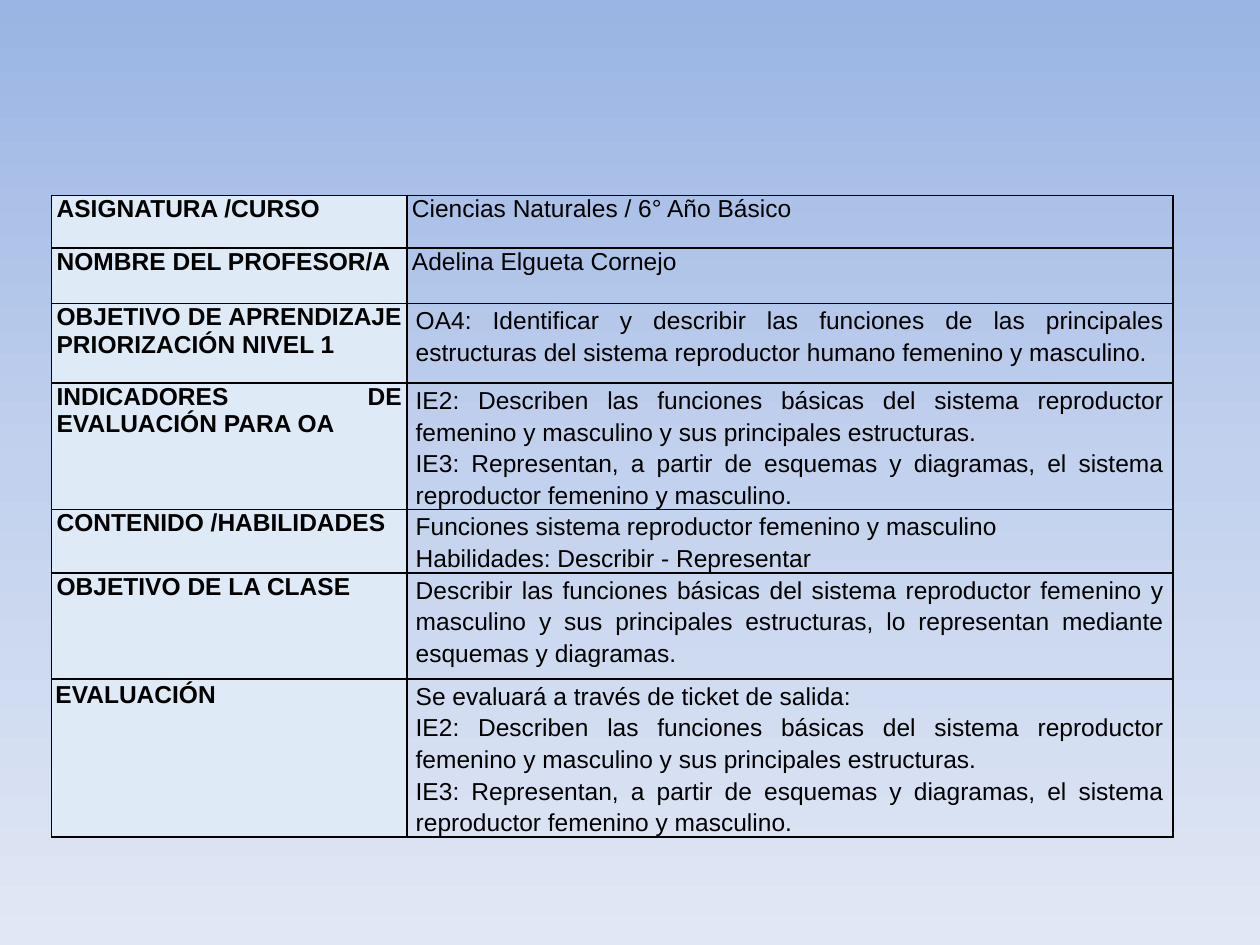
from copy import deepcopy
from dataclasses import dataclass

from lxml.etree import fromstring
from pptx import Presentation
from pptx.dml.color import RGBColor
from pptx.enum.text import PP_ALIGN
from pptx.oxml.ns import nsdecls, qn
from pptx.util import Inches, Pt

COLORS = {
    "ink": "000000", "label": "DEEAF6",
    "top": "9AB5E4", "mid": "C2D1ED", "low": "E1E8F5",
}
LEFT, TOP, HIGH = 0.41, 1.55, 5.29
COLS = (2.82, 6.08)

GOALS = (
    "IE2: Describen las funciones básicas del sistema reproductor femenino "
    "y masculino y sus principales estructuras.",
    "IE3: Representan, a partir de esquemas y diagramas, el sistema "
    "reproductor femenino y masculino.",
)


@dataclass
class Row:
    label: str
    lines: tuple[str, ...]
    high: float
    loose: bool = True
    pad: tuple[float, float] = (0.04, 0)


ROWS = [
    Row("ASIGNATURA /CURSO", ("Ciencias Naturales / 6° Año Básico",), 0.42, loose=False),
    Row("NOMBRE DEL PROFESOR/A", ("Adelina Elgueta Cornejo",), 0.44, loose=False),
    Row("OBJETIVO DE APRENDIZAJE PRIORIZACIÓN NIVEL 1",
        ("OA4: Identificar y describir las funciones de las principales "
         "estructuras del sistema reproductor humano femenino y masculino.",), 0.63),
    Row("INDICADORES DE EVALUACIÓN PARA OA", GOALS, 0.55),
    Row("CONTENIDO /HABILIDADES",
        ("Funciones sistema reproductor femenino y masculino",
         "Habilidades: Describir - Representar"), 0.34),
    Row("OBJETIVO DE LA CLASE",
        ("Describir las funciones básicas del sistema reproductor femenino y "
         "masculino y sus principales estructuras, lo representan mediante "
         "esquemas y diagramas.",), 0.84),
    Row("EVALUACIÓN", ("Se evaluará a través de ticket de salida:", *GOALS),
        0.84, pad=(0.03, 0.02)),
]


def color(name: str) -> RGBColor:
    return RGBColor.from_string(COLORS[name])


def write(frame, lines: tuple[str, ...], *, bold=False, size=14, font="Arial",
          ink="ink", gap=None, align=PP_ALIGN.JUSTIFY) -> None:
    for i, line in enumerate(lines):
        para = frame.add_paragraph() if i else frame.paragraphs[0]
        para.alignment = align
        para.line_spacing = gap
        run = para.add_run()
        run.text = line
        run.font.name, run.font.size, run.font.bold = font, Pt(size), bold
        run.font.color.rgb = color(ink)


def border(cell, width: float = 1) -> None:
    props = cell._tc.get_or_add_tcPr()
    for i, side in enumerate("LRTB"):
        props.insert(i, fromstring(
            f'<a:ln{side} {nsdecls("a")} w="{Pt(width)}"><a:solidFill>'
            f'<a:srgbClr val="{COLORS["ink"]}"/></a:solidFill></a:ln{side}>'))


def inset(cell, across: float, down: float) -> None:
    cell.margin_left = cell.margin_right = Inches(across)
    cell.margin_top = cell.margin_bottom = Inches(down)


def shade(slide) -> None:
    fill = slide.background.fill
    fill.gradient()
    fill.gradient_angle = 270
    stops = slide.element.find(".//" + qn("a:gsLst"))
    stops.insert(1, deepcopy(stops[0]))
    for i, (stop, name) in enumerate(zip(fill.gradient_stops, ("top", "mid", "low"))):
        stop.position = i / 2
        stop.color.rgb = color(name)


def draw(slide, rows: list[Row]) -> None:
    frame = slide.shapes.add_table(
        len(rows), len(COLS), Inches(LEFT), Inches(TOP),
        Inches(sum(COLS)), Inches(HIGH))
    table = frame.table
    table.first_row = table.horz_banding = False
    for col, wide in zip(table.columns, COLS):
        col.width = Inches(wide)
    for line, row in zip(table.rows, rows):
        line.height = Inches(row.high)
        label, body = line.cells
        # Label column
        label.fill.solid()
        label.fill.fore_color.rgb = color("label")
        inset(label, *row.pad)
        write(label.text_frame, (row.label,), bold=True)
        # Text column
        body.fill.background()
        inset(body, 0.07 if row.loose else 0.04, 0)
        write(body.text_frame, row.lines, gap=1.15 if row.loose else None)
        border(label)
        border(body)
    # Row heights reset the frame, so its height is set last
    frame.height = Inches(HIGH)


def main() -> None:
    deck = Presentation()
    deck.slide_width, deck.slide_height = Inches(10), Inches(7.5)
    slide = deck.slides.add_slide(deck.slide_layouts[6])
    shade(slide)
    draw(slide, ROWS)
    deck.save("out.pptx")


if __name__ == "__main__":
    main()
